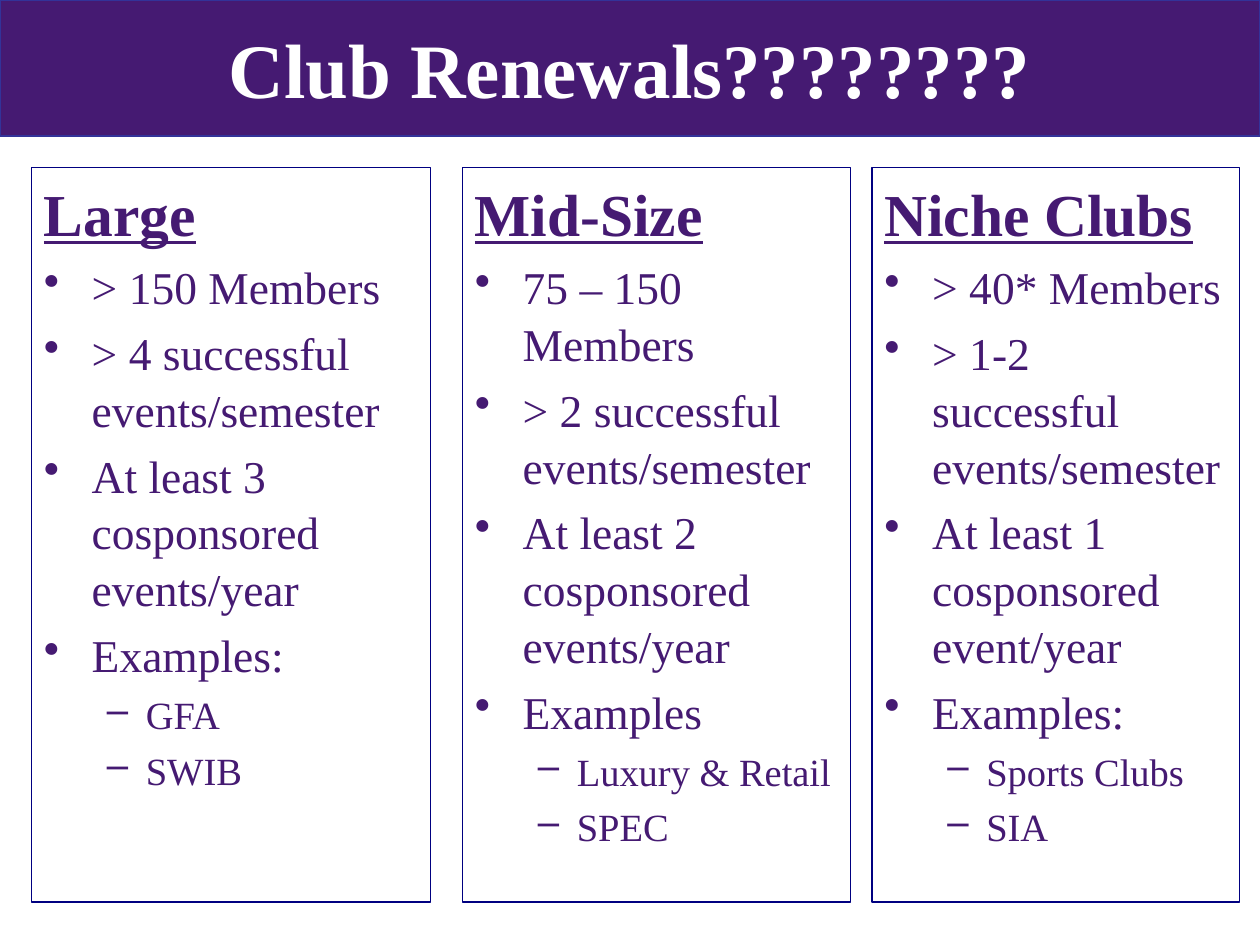
from lxml import etree
from pptx import Presentation
from pptx.dml.color import RGBColor
from pptx.enum import shapes, text
from pptx.oxml.ns import qn
from pptx.util import Inches, Pt

COLORS = {"purple": "451A72", "band_line": "333399", "navy": "000080", "white": "FFFFFF"}
FONT = "Times New Roman"
LINE_SPACING = 1.04

# Level: (size, left margin, hanging indent, bullet, outline level)
HEADING = (34, 0.38, 0.38, None, 0)
BULLET = (26, 0.38, 0.38, "•", 0)
DASH = (22, 0.81, 0.31, "–", 1)

# Column: left, width, heading, requirements, example clubs
COLUMNS = [
    (0.25, 3.17, "Large",
     ["> 150 Members", "> 4 successful events/semester",
      "At least 3 cosponsored events/year", "Examples:"],
     ["GFA", "SWIB"]),
    (3.67, 3.08, "Mid-Size",
     ["75 – 150 Members", "> 2 successful events/semester",
      "At least 2 cosponsored events/year", "Examples"],
     ["Luxury & Retail", "SPEC"]),
    (6.92, 2.92, "Niche Clubs",
     ["> 40* Members", "> 1-2 successful events/semester",
      "At least 1 cosponsored event/year", "Examples:"],
     ["Sports Clubs", "SIA"]),
]


def rgb(name):
    return RGBColor.from_string(COLORS[name])


def style_font(font, size, color, bold=False, underline=False):
    font.name = FONT
    font.size = Pt(size)
    font.color.rgb = rgb(color)
    font.bold = bold
    font.underline = underline


def add_box(slide, left, top, width, height, line, fill=None):
    box = slide.shapes.add_shape(shapes.MSO_SHAPE.RECTANGLE, Inches(left), Inches(top),
                                 Inches(width), Inches(height))
    box.shadow.inherit = False
    if fill:
        box.fill.solid()
        box.fill.fore_color.rgb = rgb(fill)
    else:
        box.fill.background()
    box.line.color.rgb = rgb(line)
    box.line.width = Pt(0.75)
    return box


def format_title(slide, title_text):
    title = slide.shapes.title
    title.left, title.top = Inches(0.75), Inches(0.08)
    title.width, title.height = Inches(8.5), Inches(0.92)
    frame = title.text_frame
    frame.text = title_text
    frame.vertical_anchor = text.MSO_ANCHOR.MIDDLE
    paragraph = frame.paragraphs[0]
    paragraph.alignment = text.PP_ALIGN.CENTER
    style_font(paragraph.runs[0].font, 44, "white", bold=True)


def format_paragraph(paragraph, words, level, first):
    size, margin, hanging, bullet, depth = level
    paragraph.text = words
    paragraph.level = depth
    paragraph.alignment = text.PP_ALIGN.LEFT
    paragraph.line_spacing = LINE_SPACING
    if not first:
        paragraph.space_before = Pt(0.2 * size)
    properties = paragraph._p.get_or_add_pPr()
    properties.set("marL", str(Inches(margin)))
    properties.set("indent", str(-Inches(hanging)))
    if bullet:
        etree.SubElement(properties, qn("a:buChar")).set("char", bullet)
    else:
        etree.SubElement(properties, qn("a:buNone"))
    style_font(paragraph.runs[0].font, size, "purple",
               bold=level is HEADING, underline=level is HEADING)


def add_column(slide, left, width, heading, requirements, examples):
    frame = add_box(slide, left, 1.33, width, 5.83, "navy").text_frame
    frame.word_wrap = True
    frame.vertical_anchor = text.MSO_ANCHOR.TOP
    entries = [(heading, HEADING)]
    entries += [(words, BULLET) for words in requirements]
    entries += [(words, DASH) for words in examples]
    for index, (words, level) in enumerate(entries):
        paragraph = frame.add_paragraph() if index else frame.paragraphs[0]
        format_paragraph(paragraph, words, level, first=index == 0)


def main():
    presentation = Presentation()
    presentation.slide_width, presentation.slide_height = Inches(10), Inches(7.5)
    slide = presentation.slides.add_slide(presentation.slide_layouts[5])

    # Header band, placed behind the title
    band = add_box(slide, 0, 0, 10, 1.08, "band_line", "purple")
    slide.shapes.title._element.addprevious(band._element)
    format_title(slide, "Club Renewals????????")

    # Club size columns
    for column in COLUMNS:
        add_column(slide, *column)

    presentation.save("out.pptx")


if __name__ == "__main__":
    main()
